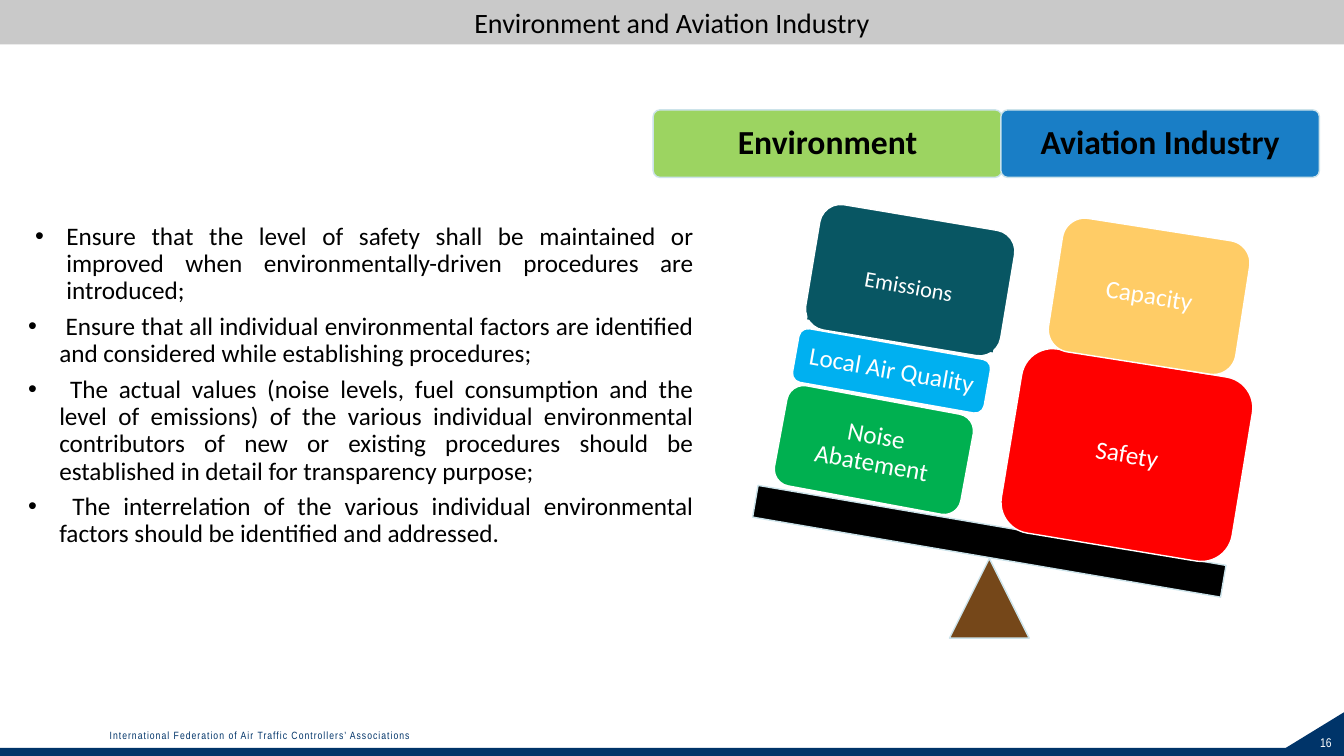
from lxml.etree import SubElement
from pptx import Presentation
from pptx.dml.color import RGBColor
from pptx.enum.shapes import MSO_SHAPE
from pptx.enum.text import MSO_ANCHOR, PP_ALIGN
from pptx.oxml.ns import qn
from pptx.util import Inches, Pt

COLUMNS, ROWS = 40, 22.5
WIDTH, HEIGHT = Inches(13.333), Inches(7.5)

COLORS = {
    "navy": "003469",
    "gray": "C9C9C9",
    "black": "000000",
    "white": "FFFFFF",
    "outline": "CCE3EA",
    "lime": "92D050",
    "blue": "0070C0",
    "brown": "663300",
    "red": "FF0000",
    "sand": "FFCC66",
    "green": "00B050",
    "sky": "00B0F0",
    "teal": "085663",
}

HEADERS = [
    ("Environment", (19.44, 3.27, 10.38, 2.01), "lime"),
    ("Aviation Industry", (29.79, 3.27, 9.48, 2.01), "blue"),
]

WEIGHTS = [
    ("Safety", (30.06, 10.77, 6.96, 5.55), 9.4, "red"),
    ("Capacity", (31.38, 6.81, 5.64, 4.02), 8.9, "sand"),
    ("Noise Abatement", (23.19, 11.88, 5.64, 3.03), 10.5, "green"),
    ("Local Air Quality", (23.64, 10.23, 5.79, 1.62), 10, "sky"),
    ("", (24.15, 6.45, 5.88, 3.78), 9.5, "teal"),
]

PRINCIPLES = [
    "Ensure that the level of safety shall be maintained or improved when "
    "environmentally-driven procedures are introduced;",
    " Ensure that all individual environmental factors are identified and "
    "considered while establishing procedures;",
    " The actual values (noise levels, fuel consumption and the level of "
    "emissions) of the various individual environmental contributors of new or "
    "existing procedures should be established in detail for transparency purpose;",
    " The interrelation of the various individual environmental factors should "
    "be identified and addressed.",
]


def color(name):
    return RGBColor.from_string(COLORS[name])


def place(area):
    left, top, width, height = area
    return (
        round(left * WIDTH / COLUMNS),
        round(top * HEIGHT / ROWS),
        round(width * WIDTH / COLUMNS),
        round(height * HEIGHT / ROWS),
    )


def set_font(paragraph, size, ink, name="Calibri", bold=False):
    font = paragraph.font
    font.size, font.name, font.bold = Pt(size), name, bold
    font.color.rgb = color(ink)


def add_block(page, kind, area, fill, line=None, turn=0, corner=None, opacity=100):
    block = page.shapes.add_shape(kind, *place(area))
    block.shadow.inherit = False
    block.rotation = turn
    if corner is not None:
        block.adjustments[0] = corner
    block.fill.solid()
    block.fill.fore_color.rgb = color(fill)
    if opacity < 100:
        tint = block.fill._xPr.find(qn("a:solidFill"))[0]
        SubElement(tint, qn("a:alpha")).set("val", str(opacity * 1000))
    if line:
        block.line.color.rgb = color(line)
        block.line.width = Pt(1)
    else:
        block.line.fill.background()
    return block


def add_label(block, text, size, ink, inset, bold=False):
    frame = block.text_frame
    frame.word_wrap = True
    frame.vertical_anchor = MSO_ANCHOR.MIDDLE
    frame.margin_left = frame.margin_right = Inches(inset)
    frame.margin_top = frame.margin_bottom = Inches(inset)
    paragraph = frame.paragraphs[0]
    paragraph.text = text
    paragraph.alignment = PP_ALIGN.CENTER
    paragraph.line_spacing = 0.9
    set_font(paragraph, size, ink, bold=bold)


def add_note(page, text, area, size, ink, align, spacing=0):
    box = page.shapes.add_textbox(*place(area))
    frame = box.text_frame
    frame.vertical_anchor = MSO_ANCHOR.MIDDLE
    frame.word_wrap = align == PP_ALIGN.RIGHT
    paragraph = frame.paragraphs[0]
    span = paragraph.add_run()
    span.text = text
    paragraph.alignment = align
    set_font(paragraph, size, ink, "Arial Narrow")
    if spacing:
        span.font._element.set("spc", str(round(spacing * 100)))


def add_bullets(page, texts, area):
    frame = page.shapes.add_textbox(*place(area)).text_frame
    frame.word_wrap = True
    for index, text in enumerate(texts):
        paragraph = frame.paragraphs[0] if index == 0 else frame.add_paragraph()
        paragraph.text = text
        paragraph.alignment = PP_ALIGN.JUSTIFY
        paragraph.line_spacing = 0.9
        paragraph.space_after = Pt(6)
        properties = paragraph._p.get_or_add_pPr()
        properties.set("marL", str(Inches(0.38 if index == 0 else 0.31)))
        properties.set("indent", str(Inches(-0.31)))
        SubElement(properties, qn("a:buFont")).set("typeface", "Arial")
        SubElement(properties, qn("a:buChar")).set("char", "•")
        set_font(paragraph, 18, "black")


def add_frame(page):
    add_block(page, MSO_SHAPE.ISOSCELES_TRIANGLE, (38.04, 21.2, 1.96, 1.2), "navy", corner=1)
    add_block(page, MSO_SHAPE.RECTANGLE, (0, 22.26, COLUMNS, 0.24), "navy")
    add_note(page, "16", (38.19, 21.81, 1.74, 0.57), 9, "white", PP_ALIGN.RIGHT)
    add_note(page, "International Federation of Air Traffic Controllers’ Associations",
             (2.97, 21.6, 12.27, 0.57), 7.5, "navy", PP_ALIGN.LEFT, 0.7)
    title = add_block(page, MSO_SHAPE.RECTANGLE, (0, 0, COLUMNS, 1.32), "gray")
    add_label(title, "Environment and Aviation Industry", 20, "black", 0.05)
    title.text_frame.paragraphs[0].line_spacing = 1.0


def add_scale(page):
    for text, area, fill in HEADERS:
        header = add_block(page, MSO_SHAPE.ROUNDED_RECTANGLE, area, fill, "outline",
                           corner=0.1, opacity=90)
        add_label(header, text, 24, "black", 0.1, bold=True)
    add_block(page, MSO_SHAPE.ISOSCELES_TRIANGLE, (28.26, 16.62, 2.37, 2.37), "brown",
              "outline", opacity=90)
    add_block(page, MSO_SHAPE.RECTANGLE, (22.38, 15.63, 14.13, 0.96), "black",
              "outline", turn=9.7)
    for text, area, turn, fill in WEIGHTS:
        weight = add_block(page, MSO_SHAPE.ROUNDED_RECTANGLE, area, fill, "white", turn)
        if text:
            add_label(weight, text, 18, "white", 0.07)
    emissions = add_block(page, MSO_SHAPE.RECTANGLE, (24.24, 7.05, 5.61, 2.97), "teal", turn=10.1)
    add_label(emissions, "Emissions", 16, "white", 0.08)


def main():
    deck = Presentation()
    deck.slide_width, deck.slide_height = WIDTH, HEIGHT
    page = deck.slides.add_slide(deck.slide_layouts[6])
    add_frame(page)
    add_bullets(page, PRINCIPLES, (0.54, 6.51, 20.4, 10.29))
    add_scale(page)
    deck.save("out.pptx")


if __name__ == "__main__":
    main()
